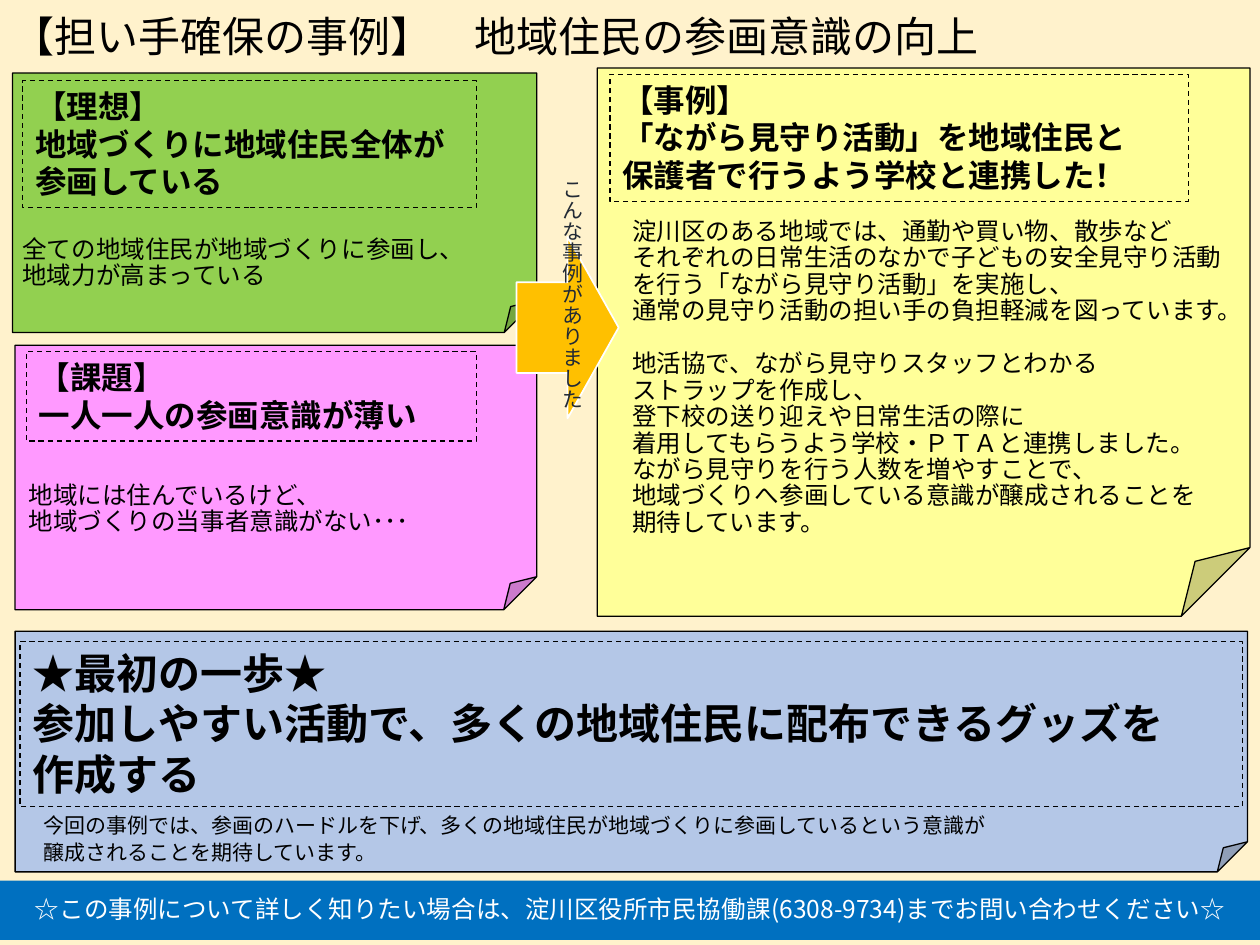
from lxml.etree import SubElement
from pptx import Presentation
from pptx.dml.color import RGBColor
from pptx.enum.dml import MSO_LINE
from pptx.enum.shapes import MSO_SHAPE
from pptx.enum.text import MSO_ANCHOR, MSO_AUTO_SIZE, PP_ALIGN
from pptx.oxml.ns import qn
from pptx.util import Inches, Pt

FONT = "Noto Sans CJK JP"
CREAM = RGBColor(0xFF, 0xF2, 0xCC)
GREEN = RGBColor(0x92, 0xD0, 0x50)
PINK = RGBColor(0xFF, 0x99, 0xFF)
YELLOW = RGBColor(0xFF, 0xFF, 0x99)
PALE_BLUE = RGBColor(0xB4, 0xC7, 0xE7)
BLUE = RGBColor(0x00, 0x70, 0xC0)
ORANGE = RGBColor(0xFF, 0xC0, 0x00)
SLATE = RGBColor(0x22, 0x2A, 0x35)
BLACK = RGBColor(0, 0, 0)
WHITE = RGBColor(0xFF, 0xFF, 0xFF)

WIDTH, HEIGHT = Inches(10), Inches(7.5)
COLUMN, ROW = WIDTH / 100, HEIGHT / 75


def to_grid(box):
    left, top, width, height = box
    return [round(n) for n in (left * COLUMN, top * ROW, width * COLUMN, height * ROW)]


def inside(box, part):
    return box[0] + part[0], box[1] + part[1], part[2], part[3]


def write(holder, lines, size, color=BLACK, bold=False, spacing=1.0,
          align=PP_ALIGN.LEFT, anchor=MSO_ANCHOR.MIDDLE, gap_before=()):
    frame = holder.text_frame
    frame.text = "\n".join(lines)
    frame_format = {"word_wrap": True, "auto_size": MSO_AUTO_SIZE.NONE,
                    "vertical_anchor": anchor}
    for name, value in frame_format.items():
        setattr(frame, name, value)
    for number, paragraph in enumerate(frame.paragraphs):
        paragraph.alignment = align
        paragraph.line_spacing = spacing
        paragraph.space_before = Pt(15 if number in gap_before else 0)
        for run in paragraph.runs:
            run_format = {"name": FONT, "size": Pt(size), "bold": bold}
            for name, value in run_format.items():
                setattr(run.font, name, value)
            run.font.color.rgb = color
            SubElement(run.font._element, qn("a:ea")).set("typeface", FONT)


def add_panel(slide, preset, box, fill=None, line=None, weight=0.75, dash=None):
    panel = slide.shapes.add_shape(preset, *to_grid(box))
    panel.shadow.inherit = False
    if fill is None:
        panel.fill.background()
    else:
        panel.fill.solid()
        panel.fill.fore_color.rgb = fill
    if line is None:
        panel.line.fill.background()
    else:
        panel.line.color.rgb = line
        panel.line.width = Pt(weight)
        panel.line.dash_style = dash
    return panel


def set_fold(note):
    guides = next(note._element.iter(qn("a:avLst")))
    fold = SubElement(guides, qn("a:gd"))
    for name, value in {"name": "adj", "fmla": "val 12500"}.items():
        fold.set(name, value)


def add_title(slide, box, text):
    title = slide.shapes.title
    for name, value in zip(("left", "top", "width", "height"), to_grid(box)):
        setattr(title, name, value)
    write(title, [text], 24, spacing=0.9)


def add_card(slide, box, fill, heading_box, heading, body_box, body,
             heading_size=18, body_size=14, spacing=0.9, gap_before=()):
    set_fold(add_panel(slide, MSO_SHAPE.FOLDED_CORNER, box, fill, BLACK))
    heading_frame = add_panel(slide, MSO_SHAPE.RECTANGLE, inside(box, heading_box),
                              line=BLACK, dash=MSO_LINE.DASH)
    write(heading_frame, heading, heading_size, bold=True, anchor=MSO_ANCHOR.TOP)
    explanation = slide.shapes.add_textbox(*to_grid(inside(box, body_box)))
    write(explanation, body, body_size, spacing=spacing, gap_before=gap_before)


def add_contact(slide, box, text):
    banner = add_panel(slide, MSO_SHAPE.RECTANGLE, box, BLUE)
    write(banner, [text], 14, WHITE, spacing=0.9, align=PP_ALIGN.CENTER)


def add_lead_in(slide, box, label_box, text):
    add_panel(slide, MSO_SHAPE.RIGHT_ARROW, box, ORANGE, WHITE, 1)
    label = slide.shapes.add_textbox(*to_grid(inside(box, label_box)))
    write(label, [text], 12, SLATE, align=PP_ALIGN.CENTER, anchor=MSO_ANCHOR.TOP)
    label.text_frame._txBody.bodyPr.set("vert", "eaVert")


def main():
    deck = Presentation()
    deck.slide_width, deck.slide_height = WIDTH, HEIGHT
    slide = deck.slides.add_slide(deck.slide_layouts[5])
    slide.background.fill.solid()
    slide.background.fill.fore_color.rgb = CREAM

    add_title(slide, (0, -0.1, 89.1, 6.4), "【担い手確保の事例】　地域住民の参画意識の向上")
    add_card(slide, (1, 5.8, 41.6, 20.6), GREEN,
             (0.8, 0.6, 36, 10.1), ["【理想】", "地域づくりに地域住民全体が参画している"],
             (-0.2, 11, 45.3, 8.2),
             ["全ての地域住民が地域づくりに参画し、", "地域力が高まっている"])
    add_card(slide, (1.2, 27.4, 41.4, 21), PINK,
             (0.9, 0.5, 35.7, 7.1), ["【課題】", "一人一人の参画意識が薄い"],
             (0.1, 9.2, 41.5, 7.7),
             ["地域には住んでいるけど、", "地域づくりの当事者意識がない･･･"])
    add_card(slide, (47.4, 5.4, 51.8, 43.5), YELLOW,
             (1, 0.5, 45.9, 10.1),
             ["【事例】", "「ながら見守り活動」を地域住民と", "保護者で行うよう学校と連携した！"],
             (1.8, 9.7, 50, 29.8),
             ["淀川区のある地域では、通勤や買い物、散歩など",
              "それぞれの日常生活のなかで子どもの安全見守り活動を行う「ながら見守り活動」を実施し、",
              "通常の見守り活動の担い手の負担軽減を図っています。",
              "地活協で、ながら見守りスタッフとわかる",
              "ストラップを作成し、",
              "登下校の送り迎えや日常生活の際に",
              "着用してもらうよう学校・ＰＴＡと連携しました。",
              "ながら見守りを行う人数を増やすことで、",
              "地域づくりへ参画している意識が醸成されることを",
              "期待しています。"],
             gap_before=(3,))
    add_card(slide, (1.2, 50.1, 97.8, 19.1), PALE_BLUE,
             (0.4, 0.8, 97, 13.1),
             ["★最初の一歩★", "参加しやすい活動で、多くの地域住民に配布できるグッズを", "作成する"],
             (1.3, 13.4, 93, 5.9),
             ["今回の事例では、参画のハードルを下げ、多くの地域住民が地域づくりに参画しているという意識が",
              "醸成されることを期待しています。"],
             heading_size=24, body_size=12, spacing=1.1)
    add_contact(slide, (0, 69.9, 100, 4.7),
                "☆この事例について詳しく知りたい場合は、淀川区役所市民協働課(6308-9734)までお問い合わせください☆")
    add_lead_in(slide, (41, 18.8, 8.1, 14.4), (1.9, -5.6, 4, 25.1), "こんな事例がありました")
    deck.save("out.pptx")


if __name__ == "__main__":
    main()
